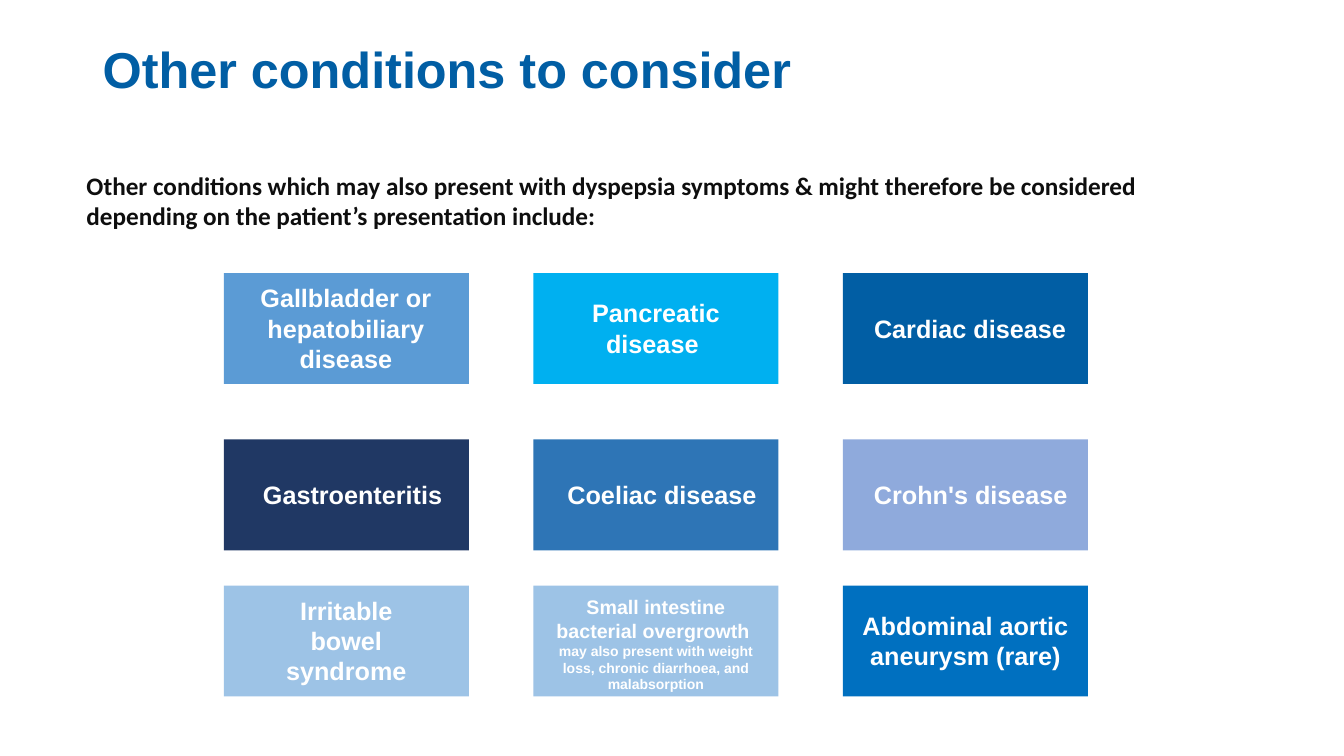
from dataclasses import dataclass
from pptx import Presentation
from pptx.dml.color import RGBColor as RGB
from pptx.enum.shapes import MSO_SHAPE as Shape
from pptx.enum.text import MSO_AUTO_SIZE as Fit, PP_ALIGN as Align
from pptx.util import Inches, Pt


@dataclass(frozen=True)
class Theme:
    title: str = "015EA4"
    ink: str = "0E0E0E"
    white: str = "FFFFFF"
    sky: str = "5B9BD5"
    cyan: str = "00B0F0"
    navy: str = "203864"
    blue: str = "2E75B6"
    lilac: str = "8FAADC"
    pale: str = "9DC3E6"
    royal: str = "0070C0"
    head: str = "Arial"
    body: str = "Calibri"
    big: int = 36
    mid: int = 18
    small: int = 14
    tiny: int = 10


class Deck:
    def __init__(self, theme):
        self.theme = theme
        self.file = Presentation()
        self.file.slide_width = Inches(13.33)
        self.file.slide_height = Inches(7.5)
        self.slide = self.file.slides.add_slide(self.file.slide_layouts[6])

    def tile(self, x, y, w, h, fill):
        tile = self.slide.shapes.add_shape(
            Shape.RECTANGLE, Inches(x), Inches(y), Inches(w), Inches(h))
        tile.shadow.inherit = False
        tile.fill.solid()
        tile.fill.fore_color.rgb = RGB.from_string(fill)
        tile.line.fill.background()

    def text(self, x, y, w, h, text, sizes, color, font, align=Align.LEFT,
             wrap=True, grow=False, space=1.0):
        box = self.slide.shapes.add_textbox(
            Inches(x), Inches(y), Inches(w), Inches(h))
        frame = box.text_frame
        frame.text = text
        frame.word_wrap = wrap
        frame.auto_size = Fit.SHAPE_TO_FIT_TEXT if grow else Fit.NONE
        for para, size in zip(frame.paragraphs, sizes):
            para.alignment = align
            para.line_spacing = space
            for run in para.runs:
                run.font.name = font
                run.font.size = Pt(size)
                run.font.bold = True
                run.font.color.rgb = RGB.from_string(color)

    def label(self, x, y, w, h, text, sizes, wrap):
        align = Align.CENTER if wrap else Align.LEFT
        self.text(x, y, w, h, text, sizes, self.theme.white, self.theme.head,
                  align, wrap, grow=True)

    def save(self):
        self.file.save("out.pptx")


def main():
    look = Theme()
    deck = Deck(look)
    deck.text(0.76, 1.64, 11.5, 0.8,
              "Other conditions which may also present with dyspepsia symptoms "
              "& might therefore be considered depending on the patient’s "
              "presentation include:", [look.mid], look.ink, look.body)
    deck.text(0.92, 0.4, 11.5, 1.45, "Other conditions to consider",
              [look.big], look.title, look.head, space=0.9)

    wide, high, step = 2.43, 1.1, 3.07
    tops = [2.71, 4.36, 5.81]
    one, two, three = 0.4, 0.71, 1.01
    mid = [look.mid]
    items = [
        ("Gallbladder or hepatobiliary disease", look.sky, 0.17, 2.08, three, mid),
        ("Pancreatic disease ", look.cyan, 0.16, 2.11, two, mid),
        ("Cardiac disease", look.title, 0.21, 2.12, one, mid),
        ("Gastroenteritis", look.navy, 0.29, 2.0, one, mid),
        ("Coeliac disease", look.blue, 0.24, 2.1, one, mid),
        ("Crohn's disease", look.lilac, 0.21, 2.14, one, mid),
        ("Irritable bowel syndrome", look.pale, 0.33, 1.77, three, mid),
        ("Small intestine bacterial overgrowth \nmay also present with weight "
         "loss, chronic diarrhoea, and malabsorption",
         look.pale, 0.09, 2.25, three, [look.small, look.tiny]),
        ("Abdominal aortic aneurysm (rare)", look.royal, 0.09, 2.25, two, mid),
    ]
    for i, (text, fill, inset, w, h, sizes) in enumerate(items):
        row, col = divmod(i, 3)
        x, y = 2.22 + col * step, tops[row]
        deck.tile(x, y, wide, high, fill)
        deck.label(x + inset, y + (high - h) / 2, w, h, text, sizes, h > one)
    deck.save()


if __name__ == "__main__":
    main()
